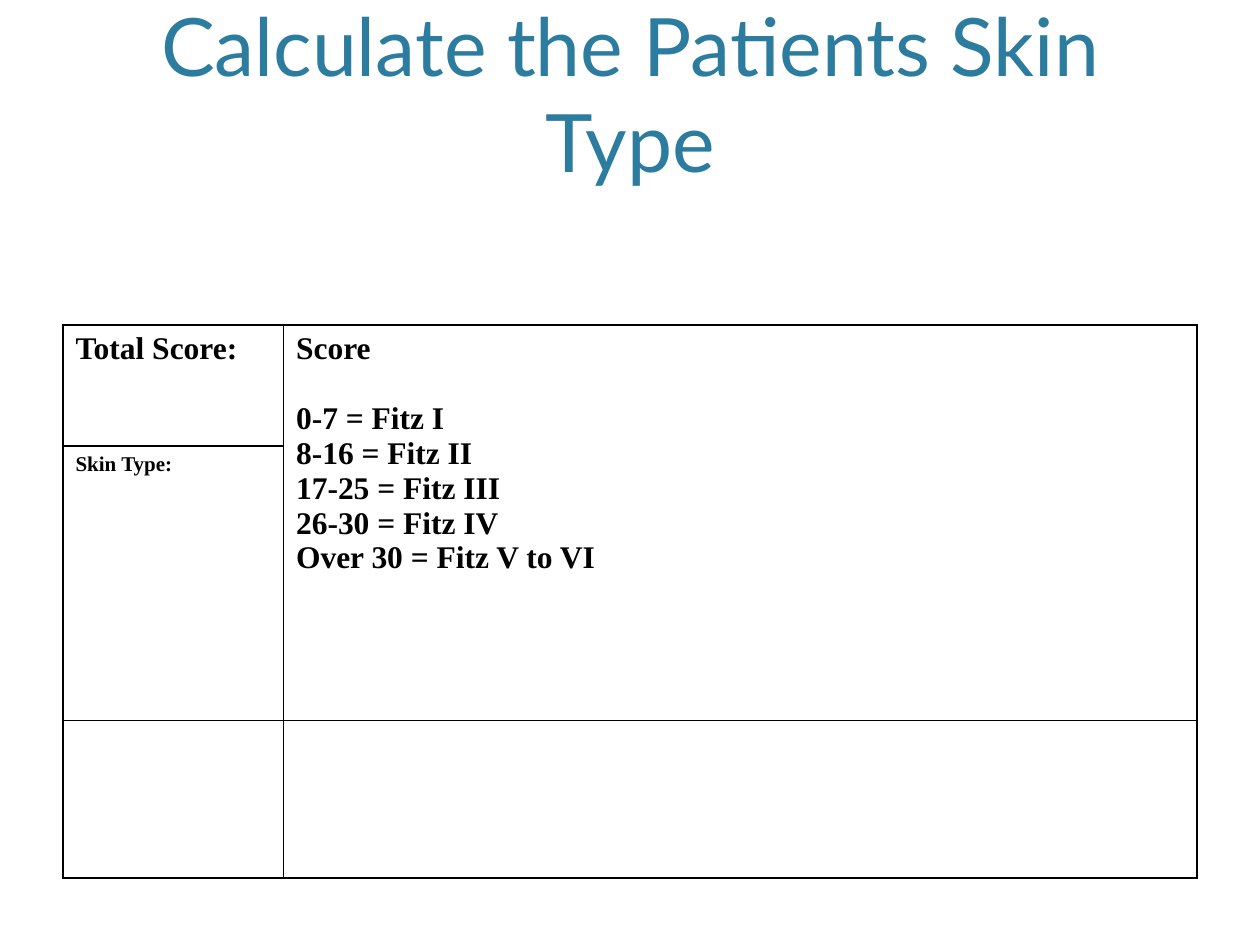
from lxml.etree import SubElement
from pptx import Presentation
from pptx.dml.color import RGBColor
from pptx.enum.text import MSO_ANCHOR, PP_ALIGN
from pptx.oxml.ns import qn
from pptx.util import Inches, Pt

TITLE = "Calculate the Patients Skin Type"
# (row, column): (font size, paragraphs)
CELL_TEXTS = {
    (0, 0): (18, ["Total Score:"]),
    (0, 1): (18, ["Score", "0-7 = Fitz I", "8-16 = Fitz II", "17-25 = Fitz III",
                  "26-30 = Fitz IV", "Over 30 = Fitz V to VI"]),
    (1, 0): (12, ["Skin Type:"]),
}
COLUMN_WIDTHS = [1.75, 7.25]
ROW_HEIGHTS = [0.96, 1.29, 1.25]
MARGIN, TABLE_TOP = 0.5, 2.58
HEADING_GAP = Pt(20)

BLUE = RGBColor(0x2C, 0x7C, 0x9F)
BLACK = RGBColor(0, 0, 0)


def style(paragraph, font_name, size, color, bold=False):
    font = paragraph.font
    font.name, font.size, font.bold = font_name, Pt(size), bold
    font.color.rgb = color


def add_borders(cell):
    properties = cell._tc.get_or_add_tcPr()
    for position, side in enumerate(("lnL", "lnR", "lnT", "lnB")):
        border = SubElement(properties, qn(f"a:{side}"), w=str(Pt(1)))
        fill = SubElement(border, qn("a:solidFill"))
        SubElement(fill, qn("a:srgbClr"), val=str(BLACK))
        properties.insert(position, border)


prs = Presentation()
prs.slide_width, prs.slide_height = Inches(10), Inches(7.5)
slide = prs.slides.add_slide(prs.slide_layouts[6])
content_width = prs.slide_width - 2 * Inches(MARGIN)

# Title
title = slide.shapes.add_textbox(
    Inches(MARGIN), Inches(0.3), content_width, Inches(1.25)).text_frame
title.word_wrap = True
title.vertical_anchor = MSO_ANCHOR.BOTTOM
title.text = TITLE
title.paragraphs[0].alignment = PP_ALIGN.CENTER
style(title.paragraphs[0], "Lato", 46, BLUE)

# Score table
scores = slide.shapes.add_table(
    len(ROW_HEIGHTS), len(COLUMN_WIDTHS), Inches(MARGIN), Inches(TABLE_TOP),
    content_width, Inches(sum(ROW_HEIGHTS))).table
scores.first_row = scores.horz_banding = False
for column, width in zip(scores.columns, COLUMN_WIDTHS):
    column.width = Inches(width)
for row, height in zip(scores.rows, ROW_HEIGHTS):
    row.height = Inches(height)
for cell in scores.iter_cells():
    cell.fill.background()
    add_borders(cell)
scores.cell(0, 1).merge(scores.cell(1, 1))

# Cell texts
for (row, column), (size, lines) in CELL_TEXTS.items():
    frame = scores.cell(row, column).text_frame
    frame.text = "\n".join(lines)
    for paragraph in frame.paragraphs:
        style(paragraph, "Times New Roman", size, BLACK, bold=True)
    if len(lines) > 1:
        frame.paragraphs[0].space_after = HEADING_GAP

prs.save("out.pptx")
